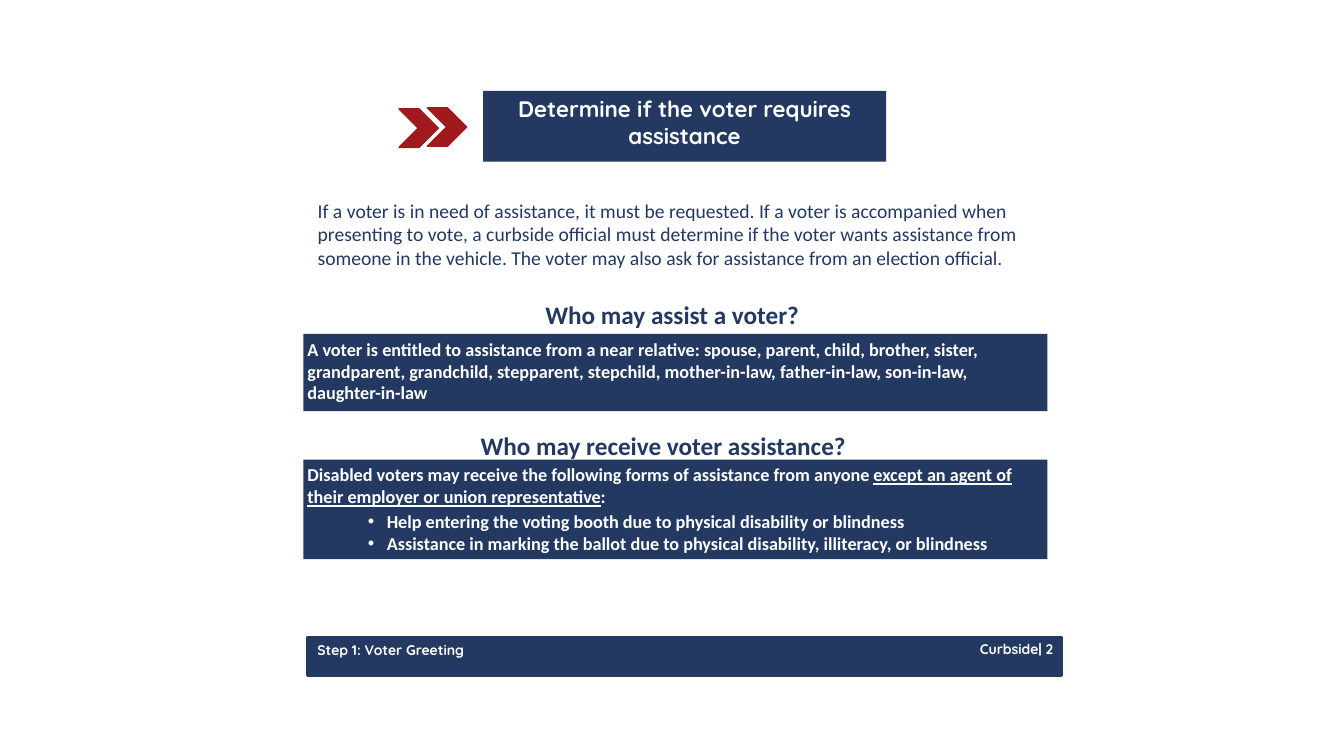
from pptx import Presentation
from pptx.dml.color import RGBColor
from pptx.enum.shapes import MSO_SHAPE
from pptx.enum.text import MSO_ANCHOR, MSO_AUTO_SIZE, PP_ALIGN
from pptx.util import Pt

NAVY = RGBColor(0x23, 0x39, 0x62)
RED = RGBColor(0xA0, 0x19, 0x1D)
WHITE = RGBColor(0xFF, 0xFF, 0xFF)
RECT, CHEVRON = MSO_SHAPE.RECTANGLE, MSO_SHAPE.CHEVRON
LEFT, CENTER, RIGHT = PP_ALIGN.LEFT, PP_ALIGN.CENTER, PP_ALIGN.RIGHT
TOP, NO_FIT = MSO_ANCHOR.TOP, MSO_AUTO_SIZE.NONE
BODY, HEAD = "Calibri", "Quicksand"
TIGHT = 2.88

deck = Presentation()
deck.slide_width, deck.slide_height = Pt(960), Pt(540)
slide = deck.slides.add_slide(deck.slide_layouts[1])
shapes = slide.shapes
title, points = slide.placeholders


def add_block(kind, box, color, line=None):
    block = shapes.add_shape(kind, *map(Pt, box))
    block.shadow.inherit = False
    block.fill.solid()
    block.fill.fore_color.rgb = color
    if line:
        block.line.color.rgb = color
        block.line.width = Pt(line)
    else:
        block.line.fill.background()
    return block


def write(shape, lines, size, color, font=BODY, bold=True, align=LEFT, inset=None):
    """Fill a shape with lines; each line is a list of runs, every second one underlined."""
    frame = shape.text_frame
    frame.word_wrap = True
    frame.auto_size = NO_FIT
    frame.vertical_anchor = TOP
    if inset:
        frame.margin_left = frame.margin_right = Pt(inset)
        frame.margin_top = frame.margin_bottom = Pt(inset)
    for i, runs in enumerate(lines):
        para = frame.add_paragraph() if i else frame.paragraphs[0]
        para.alignment = align
        para.space_before = Pt(0)
        para.font.name, para.font.size = font, Pt(size)
        para.font.bold = bold
        para.font.color.rgb = color
        for j, text in enumerate(runs):
            run = para.add_run()
            run.text = text
            if j % 2:
                run.font.underline = True


# Heading with two chevrons
title.left, title.top, title.width, title.height = map(Pt, (345, 65, 288, 50.4))
title.fill.solid()
title.fill.fore_color.rgb = NAVY
write(title, [["Determine if the voter requires assistance"]],
      16, WHITE, HEAD, align=CENTER, inset=TIGHT)
for x, y in ((305.3, 77), (285.1, 77.8)):
    add_block(CHEVRON, (x, y, 28, 27.4), RED, 1)

# Introduction
intro = shapes.add_textbox(Pt(224), Pt(139), Pt(528), Pt(55.4))
write(intro, [["If a voter is in need of assistance, it must be requested. If a voter is "
               "accompanied when presenting to vote, a curbside official must determine if "
               "the voter wants assistance from someone in the vehicle. The voter may also "
               "ask for assistance from an election official."]],
      14, NAVY, bold=False, inset=TIGHT)

# Questions, each above its navy panel
relatives = ["A voter is entitled to assistance from a near relative: spouse, parent, child, "
             "brother, sister, grandparent, grandchild, stepparent, stepchild, "
             "mother-in-law, father-in-law, son-in-law, daughter-in-law"]
disabled = ["Disabled voters may receive the following forms of assistance from anyone ",
            "except an agent of their employer or union representative", ":"]
sections = (
    ("Who may assist a voter?", 339.8, 210.2, relatives, 238.5, 55.2),
    ("Who may receive voter assistance?", 333.4, 303.8, disabled, 328.3, 71),
)
for ask, x, y, answer, top, high in sections:
    panel = add_block(RECT, (216.7, top, 531.4, high), NAVY)
    write(panel, [answer], 13, WHITE, inset=TIGHT)
    label = shapes.add_textbox(Pt(x), Pt(y), Pt(280.8), Pt(28.8))
    write(label, [[ask]], 18, NAVY, align=CENTER)

# Bulleted list, brought in front of its panel
points.left, points.top, points.width, points.height = map(Pt, (255.6, 360.7, 462.2, 39))
write(points, [["Help entering the voting booth due to physical disability or blindness"],
               ["Assistance in marking the ballot due to physical disability, illiteracy, "
                "or blindness"]], 13, WHITE)
for para in points.text_frame.paragraphs:
    props = para._p.get_or_add_pPr()
    props.set("marL", str(Pt(13.5)))
    props.set("indent", str(-Pt(13.5)))
tree = points.element.getparent()
tree.append(points.element)

# Footer
add_block(RECT, (219.6, 455, 538.6, 27.4), NAVY, 2)
step = shapes.add_textbox(Pt(219.6), Pt(455), Pt(125.3), Pt(19.4))
write(step, [["Step 1: Voter Greeting"]], 10, WHITE, HEAD)
page = shapes.add_textbox(Pt(311), Pt(454.3), Pt(444.2), Pt(28))
write(page, [["Curbside| 2"]], 10, WHITE, HEAD, align=RIGHT, inset=TIGHT)

deck.save("out.pptx")
